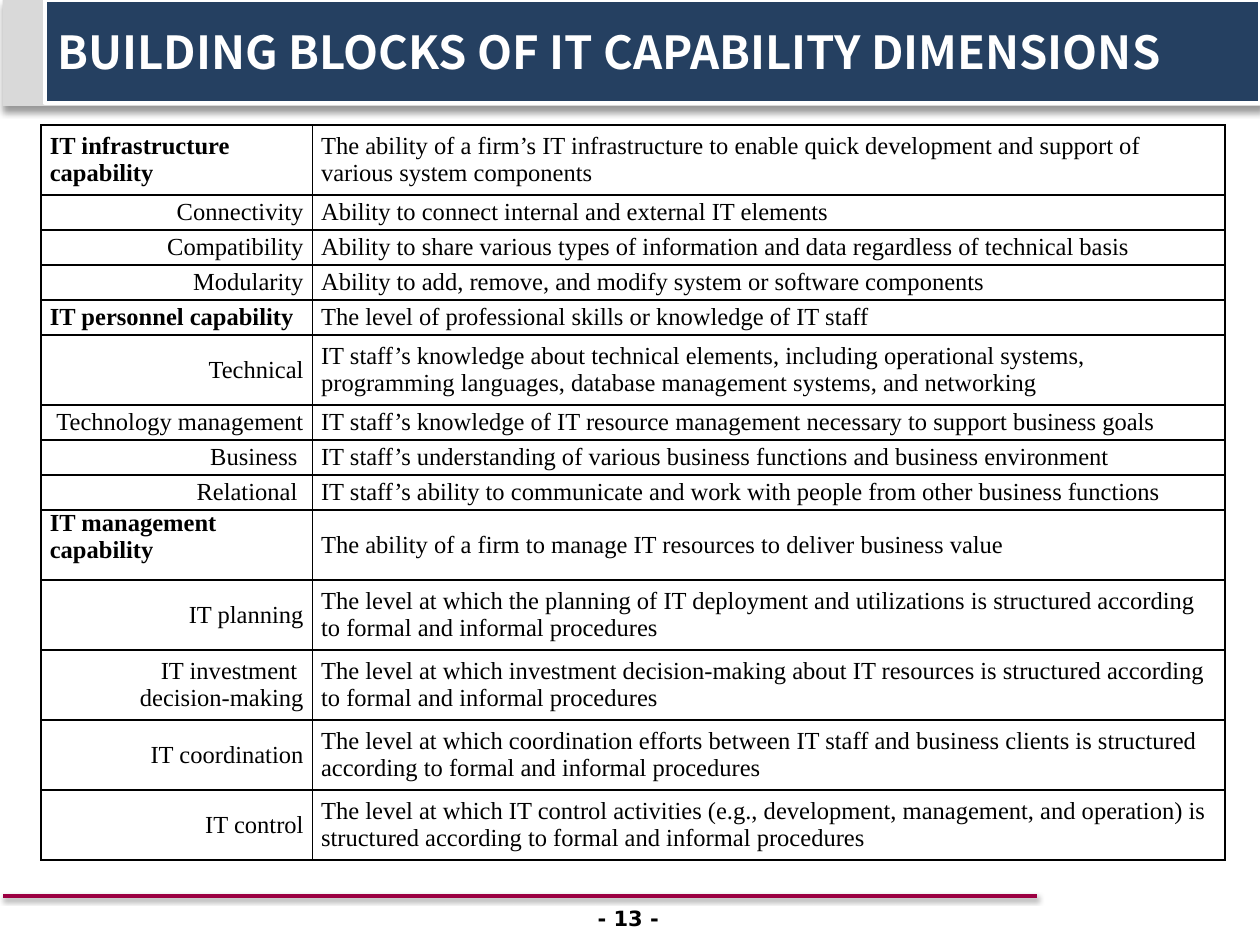
from lxml import etree
from pptx import Presentation
from pptx.dml.color import RGBColor
from pptx.enum.shapes import MSO_CONNECTOR, MSO_SHAPE
from pptx.enum.text import MSO_ANCHOR, PP_ALIGN
from pptx.oxml import parse_xml
from pptx.oxml.ns import nsdecls, qn
from pptx.util import Pt

BAND = MSO_SHAPE.ROUNDED_RECTANGLE
STRAIGHT = MSO_CONNECTOR.STRAIGHT
TOP, MIDDLE = MSO_ANCHOR.TOP, MSO_ANCHOR.MIDDLE
LEFT, CENTER, RIGHT = PP_ALIGN.LEFT, PP_ALIGN.CENTER, PP_ALIGN.RIGHT

COLORS = {
    "band": "D9D9D9",
    "title": "254061",
    "rule": "9C0042",
    "white": "FFFFFF",
    "black": "000000",
}
ROW_HEIGHT = 20
LABEL_WIDTH = 155
HEADINGS = {"IT infrastructure\ncapability", "IT personnel capability", "IT management \vcapability"}
ROWS = [
    ("IT infrastructure\ncapability", "The ability of a firm’s IT infrastructure to enable quick development and support of various system components", 2),
    ("Connectivity", "Ability to connect internal and external IT elements", 1),
    ("Compatibility", "Ability to share various types of information and data regardless of technical basis", 1),
    ("Modularity", "Ability to add, remove, and modify system or software components", 1),
    ("IT personnel capability", "The level of professional skills or knowledge of IT staff", 1),
    ("Technical", "IT staff’s knowledge about technical elements, including operational systems, \vprogramming languages, database management systems, and networking", 2),
    ("Technology management", "IT staff’s knowledge of IT resource management necessary to support business goals", 1),
    ("Business ", "IT staff’s understanding of various business functions and business environment", 1),
    ("Relational ", "IT staff’s ability to communicate and work with people from other business functions", 1),
    ("IT management \vcapability", "The ability of a firm to manage IT resources to deliver business value", 2),
    ("IT planning", "The level at which the planning of IT deployment and utilizations is structured according \vto formal and informal procedures", 2),
    ("IT investment \ndecision-making", "The level at which investment decision-making about IT resources is structured according \vto formal and informal procedures", 2),
    ("IT coordination", "The level at which coordination efforts between IT staff and business clients is structured \vaccording to formal and informal procedures", 2),
    ("IT control", "The level at which IT control activities (e.g., development, management, and operation) is structured according to formal and informal procedures", 2),
]


def rgb(name):
    return RGBColor.from_string(COLORS[name])


def style_text(tf, font, size, color, bold, align):
    for p in tf.paragraphs:
        p.alignment = align
        p.font.name = font
        p.font.size = Pt(size)
        p.font.bold = bold
        p.font.color.rgb = rgb(color)
        for r in p.runs:
            etree.SubElement(r.font._element, qn("a:ea")).set("typeface", font)


def add_shadow(shape, alpha, blur, distance):
    spPr = shape._element.spPr
    for old in spPr.findall(qn("a:effectLst")):
        spPr.remove(old)
    spPr.append(parse_xml(
        f'<a:effectLst {nsdecls("a")}><a:outerShdw blurRad="{Pt(blur)}" dist="{Pt(distance)}" '
        f'dir="5400000" rotWithShape="0"><a:srgbClr val="{COLORS["black"]}">'
        f'<a:alpha val="{alpha * 1000}"/></a:srgbClr></a:outerShdw></a:effectLst>'))


def add_header(s, left, top, width, height):
    band = s.shapes.add_shape(BAND, Pt(left + 1.5), Pt(top - 0.5), Pt(width), Pt(height + 2))
    band.adjustments[0] = 0
    band.fill.solid()
    band.fill.fore_color.rgb = rgb("band")
    band.line.fill.background()
    add_shadow(band, 40, 4, 3)

    title = s.shapes.title
    title.left, title.top = Pt(left + 25.5), Pt(top)
    title.width, title.height = Pt(width - 25.5), Pt(height)
    title.fill.solid()
    title.fill.fore_color.rgb = rgb("title")
    title.line.color.rgb = rgb("white")
    title.line.width = Pt(2.25)
    tf = title.text_frame
    tf.text = "BUILDING BLOCKS OF IT CAPABILITY DIMENSIONS"
    tf.word_wrap = False
    tf.vertical_anchor = MIDDLE
    style_text(tf, "Noto Sans CJK KR", 26, "white", True, LEFT)
    band.element.addnext(title.element)


def add_borders(cell):
    tcPr = cell._tc.get_or_add_tcPr()
    for i, side in enumerate(("lnL", "lnR", "lnT", "lnB")):
        tcPr.insert(i, parse_xml(
            f'<a:{side} {nsdecls("a")} w="{Pt(1)}"><a:solidFill>'
            f'<a:srgbClr val="{COLORS["black"]}"/></a:solidFill></a:{side}>'))


def fill_cell(cell, text, bold, align):
    cell.text = text
    cell.margin_left = cell.margin_right = Pt(5)
    cell.margin_top = cell.margin_bottom = Pt(0)
    cell.vertical_anchor = TOP if text.startswith("IT management") else MIDDLE
    cell.fill.background()
    add_borders(cell)
    style_text(cell.text_frame, "Times New Roman", 14, "black", bold, align)


def add_capability_table(s, left, top, width):
    height = ROW_HEIGHT * sum(lines for _, _, lines in ROWS)
    table = s.shapes.add_table(len(ROWS), 2, Pt(left), Pt(top), Pt(width), Pt(height)).table
    table.first_row = table.horz_banding = False
    table.columns[0].width = Pt(LABEL_WIDTH)
    table.columns[1].width = Pt(width - LABEL_WIDTH)
    for i, (label, description, lines) in enumerate(ROWS):
        table.rows[i].height = Pt(ROW_HEIGHT * lines)
        heading = label in HEADINGS
        fill_cell(table.cell(i, 0), label, heading, LEFT if heading else RIGHT)
        fill_cell(table.cell(i, 1), description, False, LEFT)


def add_footer(s, left, top, width):
    rule = s.shapes.add_connector(STRAIGHT, Pt(left), Pt(top), Pt(left + width), Pt(top))
    rule.line.color.rgb = rgb("rule")
    rule.line.width = Pt(2)
    add_shadow(rule, 38, 3.1, 1.6)

    number = s.shapes.add_textbox(Pt(275), Pt(top + 2), Pt(168), Pt(20))
    tf = number.text_frame
    tf.word_wrap = True
    tf.text = "- 13 -"
    style_text(tf, "DejaVu Sans", 12, "black", True, CENTER)


def main():
    prs = Presentation()
    prs.slide_width, prs.slide_height = Pt(720), Pt(540)
    s = prs.slides.add_slide(prs.slide_layouts[5])
    add_header(s, 0, 0, 720, 59)
    add_footer(s, 2, 512, 590.5)
    add_capability_table(s, 23.5, 71.5, 676.5)
    prs.save("out.pptx")


if __name__ == "__main__":
    main()
